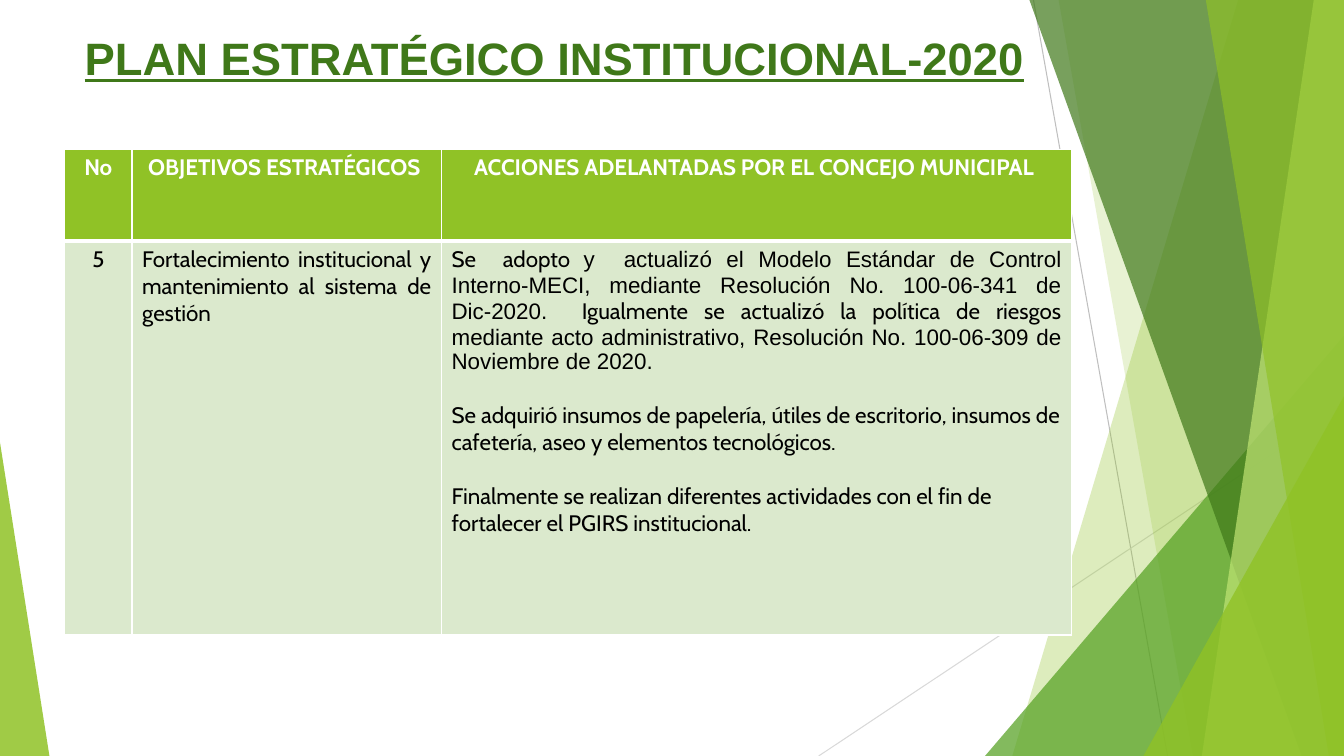
"""Build the institutional strategic plan slide with its objectives table."""
from dataclasses import dataclass

from lxml.etree import SubElement
from pptx import Presentation
from pptx.dml.color import RGBColor
from pptx.enum.shapes import MSO_CONNECTOR, MSO_SHAPE
from pptx.enum.text import MSO_ANCHOR, MSO_AUTO_SIZE, PP_ALIGN
from pptx.oxml.ns import qn
from pptx.util import Inches, Pt


@dataclass(frozen=True)
class Theme:
    """Colours, fonts and type sizes of the slide."""
    lime: str = "90C226"
    green: str = "54A021"
    forest: str = "3F7819"
    pale_lime: str = "C0E474"
    mint: str = "DBE9CD"
    white: str = "FFFFFF"
    black: str = "000000"
    light_gray: str = "D9D9D9"
    gray: str = "BFBFBF"
    title_font: str = "Arial"
    body_font: str = "Cabin"
    title_size: float = 32.4
    body_size: int = 16
    paragraph_gap: float = 19.4


THEME = Theme()
WIDTH, HEIGHT = 13.33, 7.5

TITLE = "PLAN ESTRATÉGICO INSTITUCIONAL-2020"
HEADINGS = ["No", "OBJETIVOS ESTRATÉGICOS ", "ACCIONES ADELANTADAS POR EL CONCEJO MUNICIPAL "]
NUMBER = "5"
OBJECTIVE = "Fortalecimiento institucional y mantenimiento al sistema de gestión"
ACTIONS = [
    [
        ("Se  adopto ", THEME.body_font),
        ("y  actualizó el Modelo Estándar de Control Interno-MECI, mediante "
         "Resolución No. 100-06-341 de Dic-2020.  ", THEME.title_font),
        ("Igualmente se actualizó la política de riesgos ", THEME.body_font),
        ("mediante acto administrativo, Resolución No. 100-06-309 de "
         "Noviembre de 2020.", THEME.title_font),
    ],
    [("Se adquirió insumos de papelería, útiles de escritorio, insumos de "
      "cafetería, aseo y elementos tecnológicos.", THEME.body_font)],
    [("Finalmente se realizan diferentes actividades con el fin de fortalecer "
      "el PGIRS institucional.", THEME.body_font)],
]
COLUMN_WIDTHS = [0.67, 3.07, 6.25]
ROW_HEIGHTS = [0.91, 3.91]

RAYS = [
    ((10.25, 0), (11.58, HEIGHT), THEME.gray),
    ((WIDTH, 4.03), (8.12, HEIGHT), THEME.light_gray),
]
BANDS_BEHIND = [(12.28, 10.04, THEME.lime, 30), (10.5, 11.83, THEME.lime, 20)]
BANDS_IN_FRONT = [
    (10.21, 12.91, THEME.forest, 70),
    (13.03, 11.92, THEME.pale_lime, 70),
    (11.96, 13.18, THEME.lime, 65),
]
BACK_CORNER = (9.77, 3.33, 3.56, 1, THEME.green, 72)
FRONT_CORNERS = [
    (11.34, 3.93, 1.99, 1, THEME.lime, 80),
    (0, 4.39, 0.49, 0, THEME.lime, 85),
]


def color(value):
    """Return an RGB colour from its hex text."""
    return RGBColor.from_string(value)


def paint(facet, fill, opacity):
    """Give a decorative facet a translucent fill with no outline or shadow."""
    facet.shadow.inherit = False
    facet.line.fill.background()
    facet.fill.solid()
    facet.fill.fore_color.rgb = color(fill)
    tint = next(facet._element.spPr.iter(qn("a:srgbClr")))
    SubElement(tint, qn("a:alpha"), val=str(opacity * 1000))


def add_ray(slide, start, end, stroke):
    """Draw one thin background line."""
    ray = slide.shapes.add_connector(
        MSO_CONNECTOR.STRAIGHT, *map(Inches, start + end))
    ray.line.color.rgb = color(stroke)
    ray.line.width = Pt(0.75)
    SubElement(ray._element.spPr, qn("a:effectLst"))


def add_band(slide, top_x, bottom_x, fill, opacity):
    """Draw a full-height band reaching the right edge."""
    outline = slide.shapes.build_freeform(Inches(top_x), 0)
    corners = [(WIDTH, 0), (WIDTH, HEIGHT), (bottom_x, HEIGHT)]
    outline.add_line_segments([(Inches(x), Inches(y)) for x, y in corners])
    paint(outline.convert_to_shape(), fill, opacity)


def add_corner(slide, left, top, width, apex, fill, opacity):
    """Draw a right triangle standing on the bottom edge."""
    corner = slide.shapes.add_shape(
        MSO_SHAPE.ISOSCELES_TRIANGLE, Inches(left), Inches(top),
        Inches(width), Inches(HEIGHT - top))
    corner.adjustments[0] = apex
    paint(corner, fill, opacity)


def add_decoration(slide):
    """Layer the background lines and green facets."""
    for ray in RAYS:
        add_ray(slide, *ray)
    for band in BANDS_BEHIND:
        add_band(slide, *band)
    add_corner(slide, *BACK_CORNER)
    for band in BANDS_IN_FRONT:
        add_band(slide, *band)
    for corner in FRONT_CORNERS:
        add_corner(slide, *corner)


def style_text(font, size, ink, bold):
    """Apply size, colour and weight to a font."""
    font.size = Pt(size)
    font.color.rgb = color(ink)
    font.bold = bold


def format_title(slide):
    """Place and format the slide title."""
    title = slide.shapes.title
    title.left, title.top, title.width, title.height = map(Inches, (0.74, 0.25, 9.89, 1))
    frame = title.text_frame
    frame.text = TITLE
    frame.word_wrap = True
    frame.auto_size = MSO_AUTO_SIZE.NONE
    frame.vertical_anchor = MSO_ANCHOR.TOP
    heading = frame.paragraphs[0]
    heading.alignment = PP_ALIGN.LEFT
    heading.font.name = THEME.title_font
    heading.font.underline = True
    style_text(heading.font, THEME.title_size, THEME.forest, True)


def add_borders(cell, top, bottom):
    """Add white borders with the given top and bottom widths."""
    properties = cell._tc.get_or_add_tcPr()
    for side, width in (("L", 1), ("R", 1), ("T", top), ("B", bottom)):
        border = SubElement(properties, qn(f"a:ln{side}"), w=str(Pt(width)))
        stroke = SubElement(border, qn("a:solidFill"))
        SubElement(stroke, qn("a:srgbClr"), val=THEME.white)


def fill_cell(cell, paragraphs, alignments, is_heading):
    """Write and format the paragraphs of one table cell."""
    add_borders(cell, *((1, 3) if is_heading else (3, 1)))
    cell.fill.solid()
    cell.fill.fore_color.rgb = color(THEME.lime if is_heading else THEME.mint)
    ink = THEME.white if is_heading else THEME.black
    for index, (pieces, alignment) in enumerate(zip(paragraphs, alignments)):
        frame = cell.text_frame
        paragraph = frame.add_paragraph() if index else frame.paragraphs[0]
        paragraph.alignment = alignment
        paragraph.space_before = Pt(THEME.paragraph_gap if index else 0)
        style_text(paragraph.font, THEME.body_size, ink, is_heading)
        paragraph.font.name = THEME.body_font
        for wording, typeface in pieces:
            run = paragraph.add_run()
            run.text = wording
            style_text(run.font, THEME.body_size, ink, is_heading)
            run.font.name = typeface


def add_plan_table(slide):
    """Add the table of objectives and actions."""
    table = slide.shapes.add_table(
        len(ROW_HEIGHTS), len(COLUMN_WIDTHS), Inches(0.64), Inches(1.48),
        Inches(sum(COLUMN_WIDTHS)), Inches(sum(ROW_HEIGHTS))).table
    for column, width in zip(table.columns, COLUMN_WIDTHS):
        column.width = Inches(width)
    for row, height in zip(table.rows, ROW_HEIGHTS):
        row.height = Inches(height)
    for index, heading in enumerate(HEADINGS):
        fill_cell(table.cell(0, index), [[(heading, THEME.body_font)]], [PP_ALIGN.CENTER], True)
    plan = [
        ([[(NUMBER, THEME.body_font)]], [PP_ALIGN.CENTER]),
        ([[(OBJECTIVE, THEME.body_font)]], [PP_ALIGN.JUSTIFY]),
        (ACTIONS, [PP_ALIGN.JUSTIFY, PP_ALIGN.LEFT, PP_ALIGN.LEFT]),
    ]
    for index, (paragraphs, alignments) in enumerate(plan):
        fill_cell(table.cell(1, index), paragraphs, alignments, False)


def main():
    """Assemble and save the presentation."""
    presentation = Presentation()
    presentation.slide_width, presentation.slide_height = Inches(WIDTH), Inches(HEIGHT)
    slide = presentation.slides.add_slide(presentation.slide_layouts[5])
    add_decoration(slide)
    format_title(slide)
    add_plan_table(slide)
    presentation.save("out.pptx")


if __name__ == "__main__":
    main()
